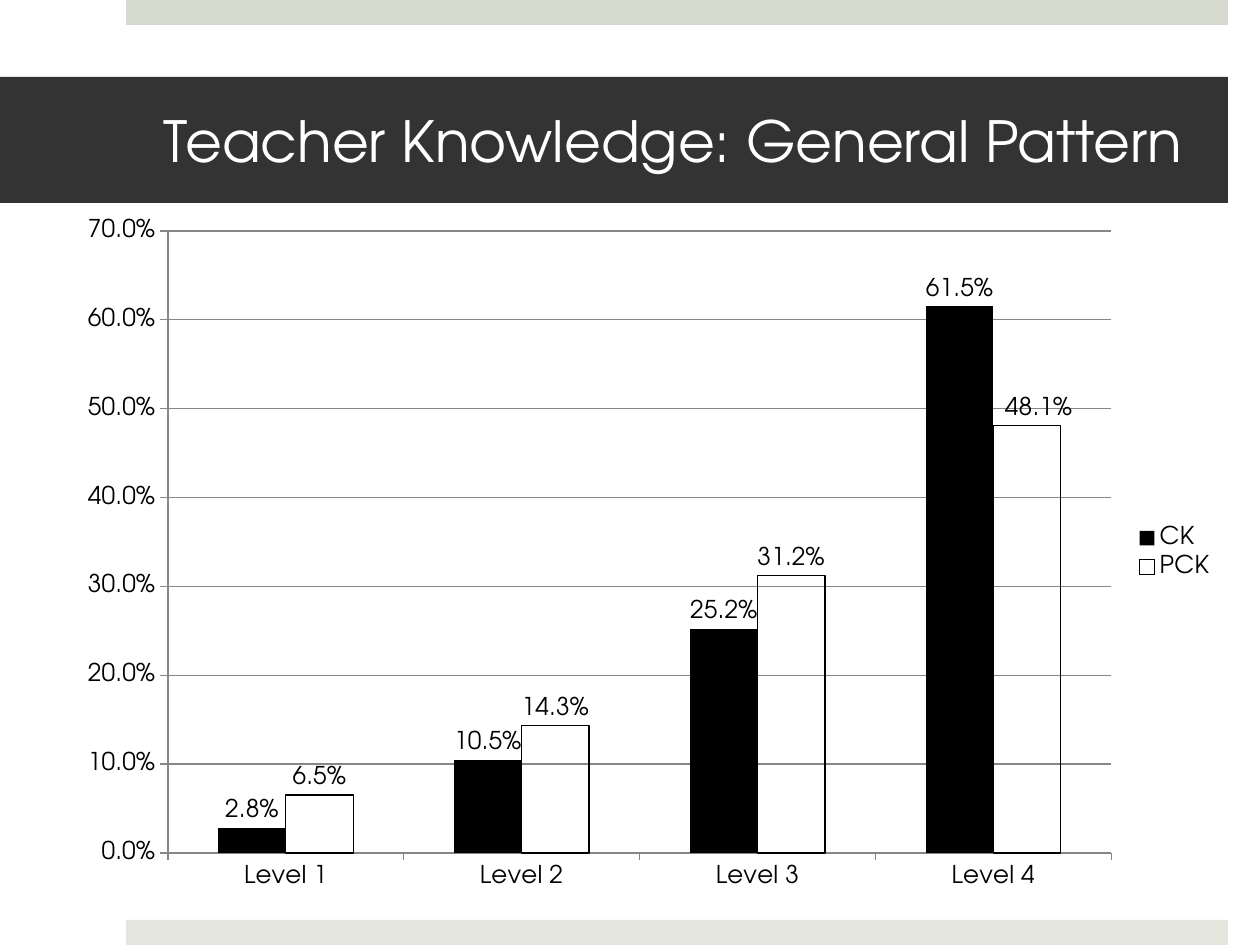
from lxml import etree
from pptx import Presentation
from pptx.chart.data import CategoryChartData
from pptx.dml.color import RGBColor
from pptx.enum.chart import XL_CHART_TYPE, XL_LABEL_POSITION, XL_LEGEND_POSITION, XL_TICK_MARK
from pptx.enum.shapes import MSO_SHAPE
from pptx.enum.text import MSO_ANCHOR, PP_ALIGN
from pptx.oxml.ns import qn
from pptx.util import Emu, Pt

PX_PER_INCH = 126
FONT = "TeX Gyre Adventor"
PERCENT = "0.0%"
COLORS = {
    "top_band": "D6D9CD",
    "bottom_band": "E4E6DE",
    "title_band": "333333",
    "title": "FFFFFF",
    "ink": "000000",
    "grid": "868686",
}
LEVELS = ["Level 1", "Level 2", "Level 3", "Level 4"]
KNOWLEDGE = {
    "CK": [0.028, 0.105, 0.252, 0.615],
    "PCK": [0.065, 0.143, 0.312, 0.481],
}


def px(length):
    return Emu(round(length * 914400 / PX_PER_INCH))


def color(name):
    return RGBColor.from_string(COLORS[name])


def style_font(font, size, color_name):
    font.name = FONT
    font.size = Pt(size)
    font.color.rgb = color(color_name)


def style_line(line, color_name):
    line.color.rgb = color(color_name)
    line.width = Pt(0.75)


def add_band(slide, left, top, width, height, color_name):
    band = slide.shapes.add_shape(
        MSO_SHAPE.RECTANGLE, px(left), px(top), px(width), px(height))
    band.shadow.inherit = False
    band.fill.solid()
    band.fill.fore_color.rgb = color(color_name)
    band.line.fill.background()
    return band


def add_title(slide, text):
    frame = add_band(slide, 0, 77, 1228, 126, "title_band").text_frame
    frame.word_wrap = True
    frame.vertical_anchor = MSO_ANCHOR.MIDDLE
    frame.margin_left, frame.margin_right = px(164), px(38)
    frame.margin_top = frame.margin_bottom = px(6)
    paragraph = frame.paragraphs[0]
    paragraph.alignment = PP_ALIGN.LEFT
    run = paragraph.add_run()
    run.text = text
    style_font(run.font, 32.4, "title")


def make_layout(**settings):
    """Return a manual chart layout, in fractions of the chart."""
    layout = etree.Element(qn("c:layout"))
    manual = etree.SubElement(layout, qn("c:manualLayout"))
    for name, value in settings.items():
        etree.SubElement(manual, qn(f"c:{name}")).set("val", str(value))
    return layout


def place_plot(chart):
    plot_area = chart.plots[0]._element.getparent()
    for old_layout in plot_area.findall(qn("c:layout")):
        plot_area.remove(old_layout)
    plot_area.insert(0, make_layout(
        layoutTarget="inner", xMode="edge", yMode="edge",
        x=0.09, y=0.04, w=0.81, h=0.89))


def shift_label(point, x, y):
    label = point.data_label
    label.position = XL_LABEL_POSITION.OUTSIDE_END
    element = label._get_or_add_dLbl()
    element.find(qn("c:idx")).addnext(make_layout(x=x, y=y))


def style_axes(chart):
    for axis in (chart.category_axis, chart.value_axis):
        axis.major_tick_mark = XL_TICK_MARK.OUTSIDE
        axis.minor_tick_mark = XL_TICK_MARK.NONE
        style_line(axis.format.line, "grid")
    value_axis = chart.value_axis
    value_axis.minimum_scale, value_axis.maximum_scale = 0, 0.7
    value_axis.major_unit = 0.1
    value_axis.tick_labels.number_format = PERCENT
    value_axis.tick_labels.number_format_is_linked = False
    value_axis.has_major_gridlines = True
    style_line(value_axis.major_gridlines.format.line, "grid")


def style_series(series, filled):
    series.invert_if_negative = False
    if filled:
        series.format.fill.solid()
        series.format.fill.fore_color.rgb = color("ink")
        series.format.line.fill.background()
    else:
        series.format.fill.background()
        style_line(series.format.line, "ink")
    labels = series.data_labels
    labels.show_value = True
    labels.number_format = PERCENT
    labels.number_format_is_linked = False
    labels.position = XL_LABEL_POSITION.OUTSIDE_END


def add_knowledge_chart(slide):
    data = CategoryChartData(number_format=PERCENT)
    data.categories = LEVELS
    for name, values in KNOWLEDGE.items():
        data.add_series(name, values)
    chart = slide.shapes.add_chart(
        XL_CHART_TYPE.COLUMN_CLUSTERED, px(63), px(203), px(1165), px(699), data).chart
    style_font(chart.font, 14, "ink")
    chart.has_title = False
    chart.has_legend = True
    chart.legend.position = XL_LEGEND_POSITION.RIGHT
    chart.legend.include_in_layout = False
    style_axes(chart)
    plot = chart.plots[0]
    plot.vary_by_categories = False
    plot.gap_width, plot.overlap = 150, 0
    content, pedagogical = plot.series
    style_series(content, filled=True)
    style_series(pedagogical, filled=False)
    shift_label(pedagogical.points[3], 0.01, 0)
    place_plot(chart)


def main():
    presentation = Presentation()
    presentation.slide_width, presentation.slide_height = px(1260), px(945)
    slide = presentation.slides.add_slide(presentation.slide_layouts[6])
    add_band(slide, 126, 0, 1102, 25, "top_band")
    add_band(slide, 126, 920, 1102, 25, "bottom_band")
    add_title(slide, "Teacher Knowledge: General Pattern")
    add_knowledge_chart(slide)
    presentation.save("out.pptx")


if __name__ == "__main__":
    main()
